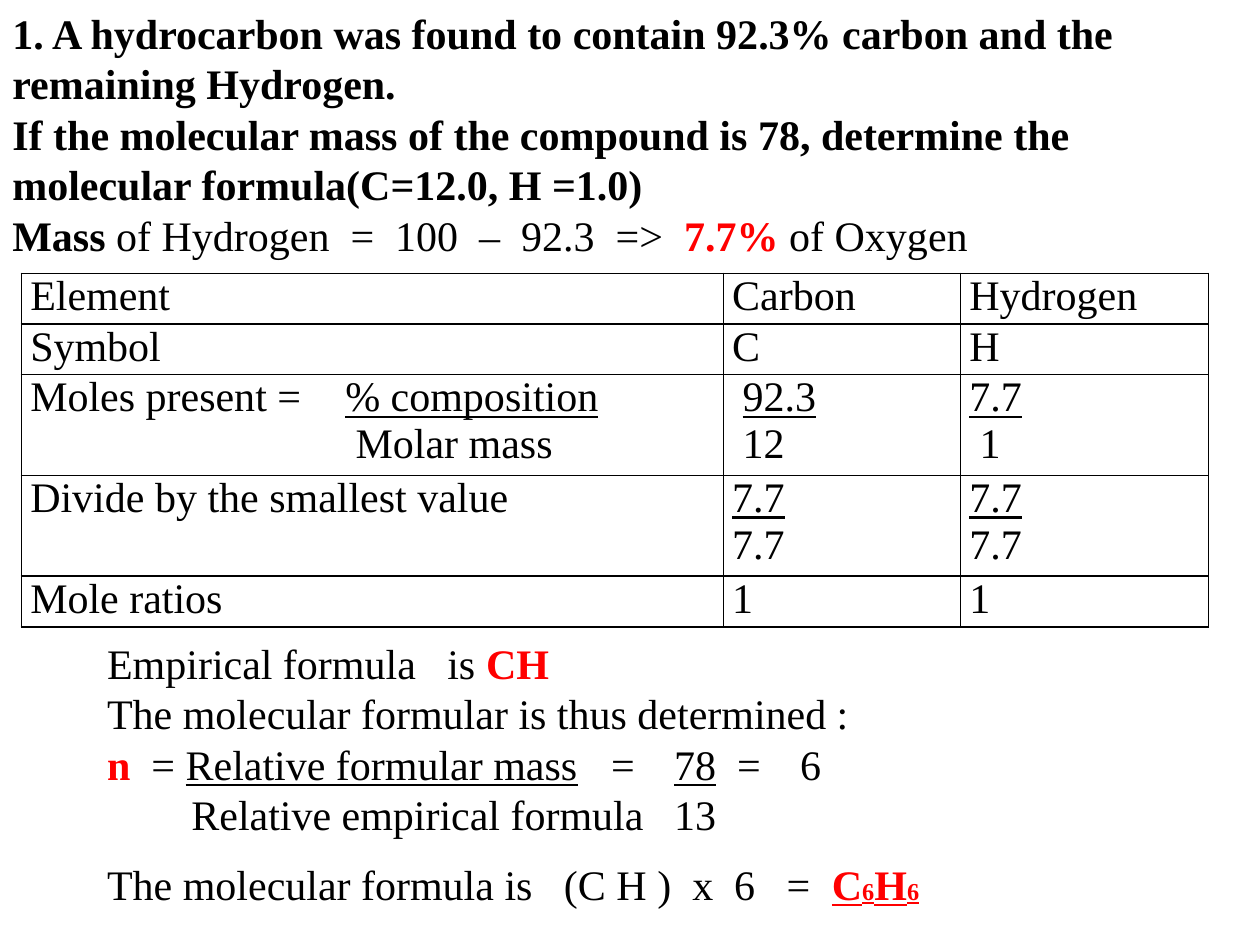
from dataclasses import dataclass

from lxml import etree
from pptx import Presentation
from pptx.dml.color import RGBColor
from pptx.enum.text import MSO_ANCHOR
from pptx.oxml.ns import qn
from pptx.util import Cm, Pt

MIDDLE = MSO_ANCHOR.MIDDLE
FONT, SIZE = "Times New Roman", 24
BLACK, RED = "000000", "FF0000"
BORDERS = ("a:lnL", "a:lnR", "a:lnT", "a:lnB")


@dataclass(frozen=True)
class Run:
    text: str
    bold: bool = False
    underline: bool = False
    color: str = BLACK
    baseline: int = 0


@dataclass(frozen=True)
class Para:
    runs: tuple[Run, ...]
    indent: float = 0
    tabs: tuple[float, ...] = ()
    before: float = 0


def rgb(value: str) -> RGBColor:
    """Turn a hex string into a colour."""
    return RGBColor.from_string(value)


def para(*runs: Run | str, **fmt) -> Para:
    """Make a paragraph from runs and plain strings."""
    return Para(tuple(Run(r) if isinstance(r, str) else r for r in runs), **fmt)


def fraction(top: str, bottom: str, indent: float = 0, shift: float = 0) -> list[Para]:
    """Make an underlined numerator above its denominator."""
    return [para(Run(top, underline=True), indent=indent),
            para(bottom, indent=indent + shift)]


def write(tf, paras: list[Para]) -> None:
    """Fill a text frame with formatted paragraphs."""
    for i, item in enumerate(paras):
        p = tf.paragraphs[0] if i == 0 else tf.add_paragraph()
        p.space_before = Pt(item.before)
        pPr = p._p.get_or_add_pPr()
        pPr.set("marL", "0")
        pPr.set("indent", str(Cm(item.indent)))
        if item.tabs:
            tabs = etree.SubElement(pPr, qn("a:tabLst"))
            for pos in item.tabs:
                etree.SubElement(tabs, qn("a:tab"), pos=str(Cm(pos)), algn="l")
        for run in item.runs:
            r = p.add_run()
            r.text = run.text
            r.font.name, r.font.size = FONT, Pt(SIZE)
            r.font.bold, r.font.underline = run.bold, run.underline
            r.font.color.rgb = rgb(run.color)
            if run.baseline:
                r._r.get_or_add_rPr().set("baseline", str(run.baseline))


def add_text(s, left: float, top: float, width: float, height: float,
             paras: list[Para]) -> None:
    """Add a wrapped, vertically centred text box."""
    sp = s.shapes.add_textbox(Cm(left), Cm(top), Cm(width), Cm(height))
    tf = sp.text_frame
    tf.word_wrap = True
    tf.vertical_anchor = MIDDLE
    write(tf, paras)


def add_borders(cell, color: str, width: float) -> None:
    """Draw a solid line on all four sides of a cell."""
    tcPr = cell._tc.get_or_add_tcPr()
    for i, tag in enumerate(BORDERS):
        ln = etree.Element(qn(tag), w=str(Pt(width)))
        fill = etree.SubElement(ln, qn("a:solidFill"))
        etree.SubElement(fill, qn("a:srgbClr"), val=color)
        tcPr.insert(i, ln)


def add_grid(s, left: float, top: float, cols: list[float], rows: list[float],
             cells: list[list[list[Para]]]) -> None:
    """Add a plain bordered table."""
    table = s.shapes.add_table(len(rows), len(cols), Cm(left), Cm(top),
                               Cm(sum(cols)), Cm(sum(rows))).table
    table.first_row = table.horz_banding = False
    for col, width in zip(table.columns, cols):
        col.width = Cm(width)
    for row, height, contents in zip(table.rows, rows, cells):
        row.height = Cm(height)
        for cell, paras in zip(row.cells, contents):
            cell.margin_left = cell.margin_right = Cm(0.18)
            cell.margin_top = cell.margin_bottom = 0
            cell.fill.background()
            add_borders(cell, BLACK, 1)
            write(cell.text_frame, paras)


QUESTION = [
    para(Run("1. A hydrocarbon was found to contain 92.3% carbon and the "
             "remaining Hydrogen.", bold=True)),
    para(Run("If the molecular mass of the compound is 78, determine the "
             "molecular formula(C=12.0, H =1.0)", bold=True)),
    para(Run("Mass", bold=True), " of Hydrogen  =  100  –  92.3  =>  ",
         Run("7.7% ", bold=True, color=RED), "of Oxygen"),
]

CELLS = [
    [[para("Element")], [para("Carbon")], [para("Hydrogen")]],
    [[para("Symbol")], [para("C")], [para("H")]],
    [[para("Moles present =\t", Run("% composition", underline=True), tabs=(6.3,)),
      para("Molar mass", indent=6.56)],
     fraction("92.3", "12", indent=0.21), fraction("7.7", "1", shift=0.21)],
    [[para("Divide by the smallest value")],
     fraction("7.7", "7.7"), fraction("7.7", "7.7")],
    [[para("Mole ratios")], [para("1")], [para("1")]],
]

INDENT = 1.27
FORMULA = [Run(text, bold=True, underline=True, color=RED, baseline=base)
           for text, base in (("C", 0), ("6", -30), ("H", 0), ("6", -30))]
ANSWER = [
    para("Empirical formula   is ", Run("CH", bold=True, color=RED), indent=INDENT),
    para("The molecular formular is thus determined :", indent=INDENT),
    para(Run("n ", bold=True, color=RED), " = ",
         Run("Relative formular mass", underline=True), "\t=\t",
         Run("78", underline=True), "\t=\t6",
         indent=INDENT, tabs=(15.24, 16.35, 18.89, 20.0)),
    para("Relative empirical formula\t13", indent=2.97, tabs=(16.51,)),
    para("The molecular formula is   (C H )  x  6   =  ", *FORMULA,
         indent=INDENT, before=11),
]


def main() -> None:
    """Build the slide and save it."""
    prs = Presentation()
    prs.slide_width, prs.slide_height = Cm(25.4), Cm(19.05)
    s = prs.slides.add_slide(prs.slide_layouts[6])
    add_text(s, 0, 0, 25.4, 5.38, QUESTION)
    add_grid(s, 0.43, 5.51, [14.15, 4.78, 5.0], [1.02, 1.02, 2.03, 2.03, 1.02], CELLS)
    add_text(s, 0.64, 12.7, 24.76, 5.77, ANSWER)
    prs.save("out.pptx")


if __name__ == "__main__":
    main()
